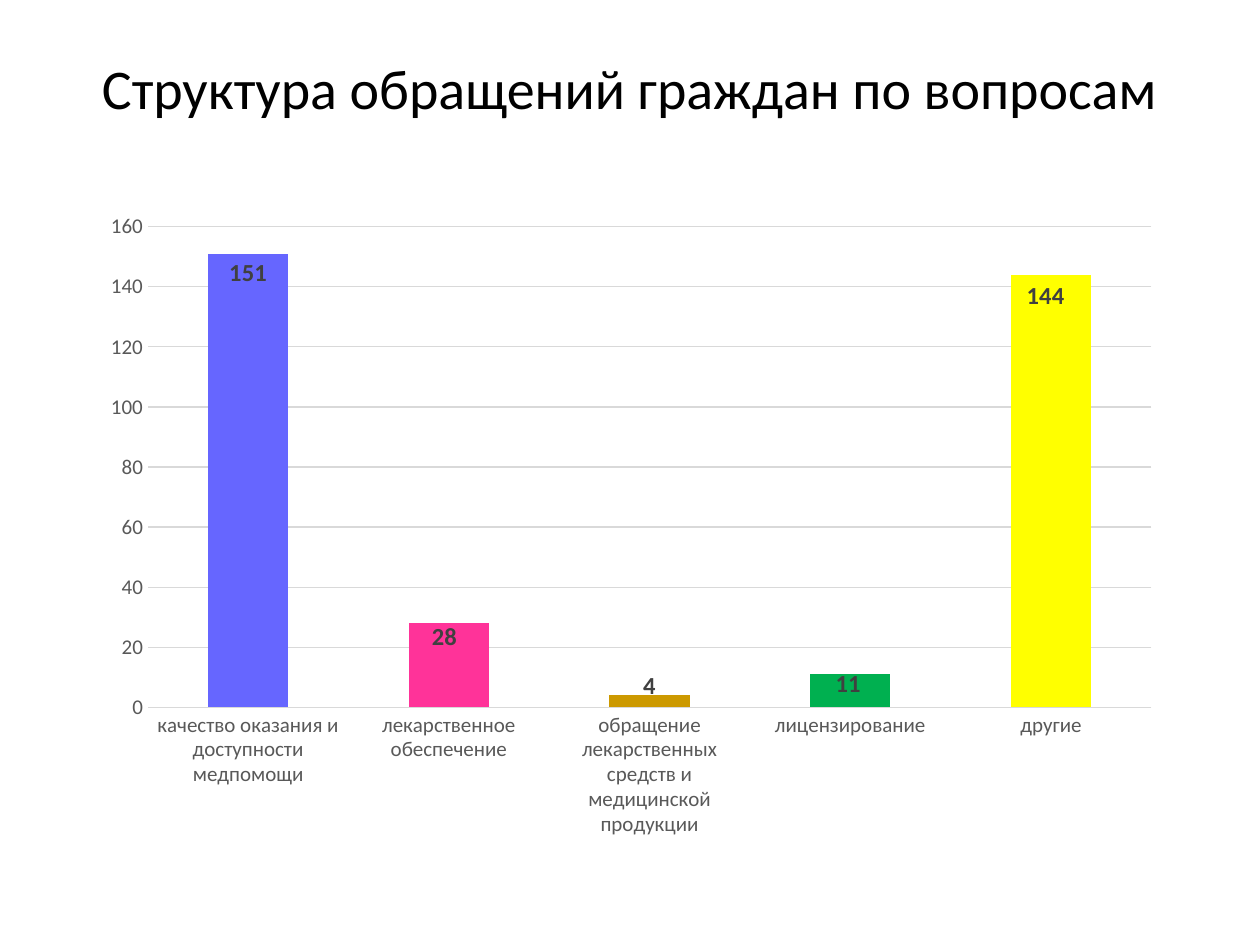
"""Build a slide with a column chart of citizens' appeals by topic."""
from typing import NamedTuple

from lxml.etree import SubElement
from pptx import Presentation
from pptx.chart.data import CategoryChartData
from pptx.dml.color import RGBColor
from pptx.enum.chart import XL_CHART_TYPE as ChartType, XL_LABEL_POSITION as LabelPos, XL_TICK_MARK as Tick
from pptx.enum.text import MSO_ANCHOR as Anchor, PP_ALIGN as Align
from pptx.oxml import parse_xml
from pptx.oxml.ns import nsdecls, qn
from pptx.util import Cm, Pt

FONT = "Calibri"
COLORS = {
    "title": "000000", "axis": "595959", "label": "404040", "grid": "D9D9D9", "series": "5B9BD5",
    "blue": "6666FF", "pink": "FF3399", "ochre": "CC9900", "green": "00B050", "yellow": "FFFF00",
}


class Topic(NamedTuple):
    name: str
    count: int
    color: str
    label_dx: float
    label_dy: float


TOPICS = [
    Topic("качество оказания и доступности медпомощи", 151, "blue", 0, 0.06),
    Topic("лекарственное обеспечение", 28, "pink", -0.004, 0.052),
    Topic("обращение лекарственных средств и медицинской продукции", 4, "ochre", 0, 0.017),
    Topic("лицензирование", 11, "green", -0.002, 0.046),
    Topic("другие", 144, "yellow", -0.005, 0.063),
]


def rgb(key: str) -> RGBColor:
    return RGBColor.from_string(COLORS[key])


def style_font(font, size: float, color: str, bold: bool = False) -> None:
    font.name, font.size, font.bold = FONT, Pt(size), bold
    font.color.rgb = rgb(color)


def make_layout(**values: float):
    layout = parse_xml(f"<c:layout {nsdecls('c')}/>")
    manual = SubElement(layout, qn("c:manualLayout"))
    for tag, value in values.items():
        SubElement(manual, qn(f"c:{tag}")).set("val", str(value))
    return layout


def place_plot(chart, x: float, y: float, w: float, h: float) -> None:
    layout = make_layout(layoutTarget="inner", xMode="edge", yMode="edge", x=x, y=y, w=w, h=h)
    area = chart._chartSpace.find(f".//{qn('c:plotArea')}")
    for old in area.findall(qn("c:layout")):
        area.remove(old)
    area.insert(0, layout)


def add_title(slide, text: str) -> None:
    sp = slide.shapes.title
    sp.left, sp.top, sp.width, sp.height = Cm(1.75), Cm(0), Cm(21.9), Cm(3.7)
    tf = sp.text_frame
    tf.word_wrap, tf.vertical_anchor = True, Anchor.MIDDLE
    p = tf.paragraphs[0]
    p.alignment, p.line_spacing = Align.CENTER, 0.9
    r = p.add_run()
    r.text = text
    style_font(r.font, 32, "title")


def style_axes(chart) -> None:
    for axis in (chart.category_axis, chart.value_axis):
        axis.major_tick_mark = axis.minor_tick_mark = Tick.NONE
        axis.format.line.fill.background()
        style_font(axis.tick_labels.font, 12, "axis")
    values = chart.value_axis
    values.minimum_scale, values.maximum_scale, values.major_unit = 0, 160, 20
    values.has_major_gridlines = True
    line = values.major_gridlines.format.line
    line.width = Pt(0.75)
    line.color.rgb = rgb("grid")


def style_columns(chart, topics: list[Topic]) -> None:
    plot = chart.plots[0]
    plot.gap_width, plot.vary_by_categories = 150, False
    series = plot.series[0]
    series.format.fill.solid()
    series.format.fill.fore_color.rgb = rgb("series")
    labels = series.data_labels
    labels.show_value, labels.position = True, LabelPos.OUTSIDE_END
    style_font(labels.font, 14, "label", bold=True)
    for i, topic in enumerate(topics):
        point = series.points[i]
        point.format.fill.solid()
        point.format.fill.fore_color.rgb = rgb(topic.color)
        point.data_label.position = LabelPos.OUTSIDE_END
        style_font(point.data_label.font, 14, "label", bold=True)
    for label, topic in zip(chart._chartSpace.iter(qn("c:dLbl")), topics):
        label.insert(1, make_layout(x=topic.label_dx, y=topic.label_dy))


def add_topics_chart(slide, topics: list[Topic]) -> None:
    data = CategoryChartData()
    data.categories = [t.name for t in topics]
    data.add_series("Series 1", [t.count for t in topics])
    chart = slide.shapes.add_chart(
        ChartType.COLUMN_CLUSTERED, Cm(1.8), Cm(4.06), Cm(21.87), Cm(13.08), data).chart
    chart.has_legend = chart.has_title = False
    style_font(chart.font, 10, "title")
    style_axes(chart)
    style_columns(chart, topics)
    place_plot(chart, 0.054, 0.039, 0.925, 0.741)


def main() -> None:
    prs = Presentation()
    prs.slide_width, prs.slide_height = Cm(25.4), Cm(19.05)
    slide = prs.slides.add_slide(prs.slide_layouts[5])
    add_title(slide, "Структура обращений граждан по вопросам")
    add_topics_chart(slide, TOPICS)
    prs.save("out.pptx")


if __name__ == "__main__":
    main()
